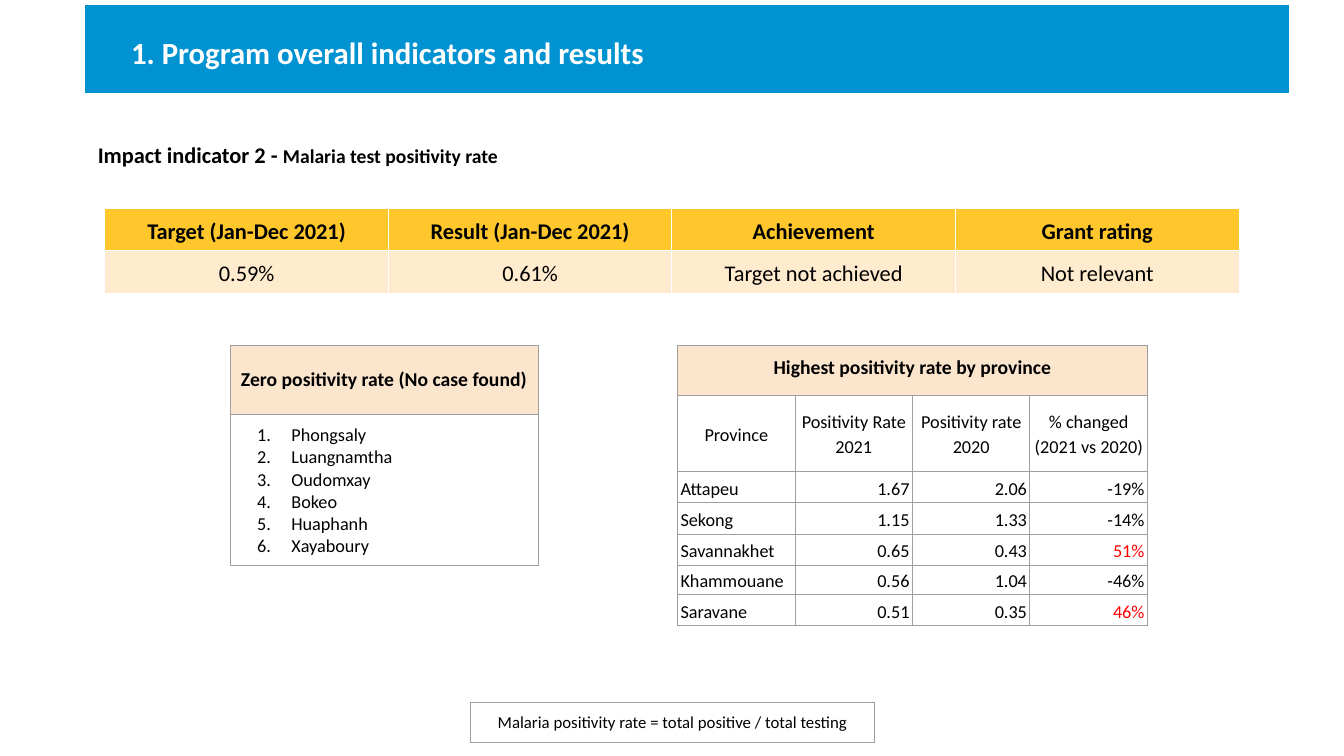
import dataclasses

import lxml.etree
import pptx
import pptx.dml.color
import pptx.enum.text
import pptx.oxml.ns
import pptx.util

ALIGN = pptx.enum.text.PP_ALIGN
ANCHOR = pptx.enum.text.MSO_ANCHOR
PX = 9144  # 100 px to the inch


@dataclasses.dataclass(frozen=True)
class Theme:
    font: str = "Calibri"
    ink: str = "000000"
    paper: str = "FFFFFF"
    banner: str = "0092D1"
    gold: str = "FFC72C"
    cream: str = "FFEBCD"
    peach: str = "FCE5CD"
    rule: str = "9E9E9E"
    alert: str = "FF0000"
    title_size: int = 22
    lead_size: int = 16
    head_size: int = 14
    body_size: int = 13
    note_size: int = 12


def px(length):
    return pptx.util.Emu(round(length * PX))


def rgb(color):
    return pptx.dml.color.RGBColor.from_string(color)


def add_xml(parent, tag, **attributes):
    element = lxml.etree.SubElement(parent, pptx.oxml.ns.qn(tag))
    for name, value in attributes.items():
        element.set(name, str(value))
    return element


class SlideBuilder:
    def __init__(self, slide, theme):
        self.slide = slide
        self.theme = theme

    def style(self, run, size, bold=False, color=None):
        run.font.name = self.theme.font
        run.font.size = pptx.util.Pt(size)
        run.font.bold = bold
        run.font.color.rgb = rgb(color or self.theme.ink)

    def margins(self, target, left, top, right, bottom):
        target.margin_left, target.margin_top = px(left), px(top)
        target.margin_right, target.margin_bottom = px(right), px(bottom)

    def title(self, text, left, top, width, height):
        banner = self.slide.shapes.title
        banner.left, banner.top = px(left), px(top)
        banner.width, banner.height = px(width), px(height)
        banner.fill.solid()
        banner.fill.fore_color.rgb = rgb(self.theme.banner)
        banner.line.color.rgb = rgb(self.theme.banner)
        banner.line.width = pptx.util.Pt(0.75)
        frame = banner.text_frame
        frame.text = text
        frame.word_wrap = True
        frame.auto_size = pptx.enum.text.MSO_AUTO_SIZE.NONE
        frame.vertical_anchor = ANCHOR.MIDDLE
        self.margins(frame, 45, 0, 0, 0)
        line = frame.paragraphs[0]
        line.alignment = ALIGN.LEFT
        line.line_spacing = 1.2
        self.style(line.runs[0], self.theme.title_size, True, self.theme.paper)

    def heading(self, parts, left, top, width, height):
        box = self.slide.shapes.add_textbox(px(left), px(top), px(width), px(height))
        frame = box.text_frame
        frame.word_wrap = True
        self.margins(frame, 0, 0, 0, 0)
        line = frame.paragraphs[0]
        line.line_spacing = 1.3
        for text, size in parts:
            run = line.add_run()
            run.text = text
            self.style(run, size, True)

    def table(self, left, top, width, columns, heights, border, border_width):
        frame = self.slide.shapes.add_table(
            len(heights), columns, px(left), px(top), px(width), px(sum(heights)))
        table = frame.table
        table.first_row = table.horz_banding = False
        for column in table.columns:
            column.width = px(width / columns)
        for row, height in zip(table.rows, heights):
            row.height = px(height)
        for cell in table.iter_cells():
            cell.fill.background()
            self.borders(cell, border, border_width)
        return table

    def borders(self, cell, color, width):
        properties = cell._tc.get_or_add_tcPr()
        for place, side in enumerate("LRTB"):
            line = add_xml(properties, f"a:ln{side}", w=pptx.util.Pt(width))
            add_xml(add_xml(line, "a:solidFill"), "a:srgbClr", val=color)
            properties.insert(place, line)  # borders come before the fill

    def cell(self, cell, text, size, bold=False, color=None, fill=None,
             align=ALIGN.LEFT, anchor=ANCHOR.MIDDLE, padding=(3, 2),
             spacing=1.15, numbered=False):
        if fill:
            cell.fill.solid()
            cell.fill.fore_color.rgb = rgb(fill)
        cell.vertical_anchor = anchor
        self.margins(cell, *padding, *padding)
        cell.text_frame.text = text
        for paragraph in cell.text_frame.paragraphs:
            if numbered:
                self.number(paragraph)
            paragraph.alignment = align
            paragraph.line_spacing = spacing
            self.style(paragraph.runs[0], size, bold, color)

    def number(self, paragraph):
        properties = paragraph._p.get_or_add_pPr()
        properties.set("marL", str(px(50)))
        properties.set("indent", str(px(-34)))
        add_xml(add_xml(properties, "a:buClr"), "a:srgbClr", val=self.theme.ink)
        add_xml(properties, "a:buAutoNum", type="arabicPeriod")


RESULTS = [
    ("Target (Jan-Dec 2021)", "Result (Jan-Dec 2021)", "Achievement", "Grant rating"),
    ("0.59%", "0.61%", "Target not achieved", "Not relevant"),
]
ZERO_PROVINCES = ["Phongsaly", "Luangnamtha", "Oudomxay", "Bokeo", "Huaphanh", "Xayaboury"]
RATE_HEADS = ["Province", "Positivity Rate 2021", "Positivity rate 2020",
              "% changed (2021 vs 2020)"]
RATES = [
    ("Attapeu", "1.67", "2.06", "-19%"),
    ("Sekong", "1.15", "1.33", "-14%"),
    ("Savannakhet", "0.65", "0.43", "51%"),
    ("Khammouane", "0.56", "1.04", "-46%"),
    ("Saravane", "0.51", "0.35", "46%"),
]


def main():
    deck = pptx.Presentation()
    deck.slide_width, deck.slide_height = px(1333), px(750)
    theme = Theme()
    builder = SlideBuilder(deck.slides.add_slide(deck.slide_layouts[5]), theme)
    roomy = dict(padding=(10, 10), spacing=1.0)

    # Title banner and indicator heading
    builder.title("1. Program overall indicators and results", 85, 5, 1193, 87)
    builder.heading([("Impact indicator 2 - ", theme.lead_size),
                     ("Malaria test positivity rate", theme.head_size)],
                    97, 132, 1193, 543)

    # Target against result
    results = builder.table(104, 207, 1125, 4, [42, 42], theme.paper, 0.83)
    for r, (row, fill) in enumerate(zip(RESULTS, (theme.gold, theme.cream))):
        for c, text in enumerate(row):
            builder.cell(results.cell(r, c), text, theme.lead_size, bold=r == 0,
                         fill=fill, align=ALIGN.CENTER)

    # Provinces without cases
    zero = builder.table(229, 343, 305, 1, [68, 150], theme.rule, 0.75)
    builder.cell(zero.cell(0, 0), "Zero positivity rate (No case found)",
                 theme.head_size, bold=True, fill=theme.peach, **roomy)
    builder.cell(zero.cell(1, 0), "\n".join(ZERO_PROVINCES), theme.body_size,
                 numbered=True, **roomy)

    # Provinces with the highest rates
    highest = builder.table(672, 343, 466, 4, [49, 76, 31, 31, 31, 29, 31],
                            theme.rule, 0.83)
    highest.cell(0, 0).merge(highest.cell(0, 3))
    builder.cell(highest.cell(0, 0), "Highest positivity rate by province",
                 theme.head_size, bold=True, fill=theme.peach,
                 align=ALIGN.CENTER, anchor=ANCHOR.TOP, **roomy)
    for c, text in enumerate(RATE_HEADS):
        builder.cell(highest.cell(1, c), text, theme.body_size, align=ALIGN.CENTER)
    for r, row in enumerate(RATES, start=2):
        for c, text in enumerate(row):
            rising = c == 3 and not text.startswith("-")
            builder.cell(highest.cell(r, c), text, theme.body_size,
                         color=theme.alert if rising else theme.ink,
                         align=ALIGN.RIGHT if c else ALIGN.LEFT)

    # Definition of the rate
    definition = builder.table(467, 697, 400, 1, [40], theme.rule, 0.75)
    builder.cell(definition.cell(0, 0),
                 "Malaria positivity rate = total positive / total testing",
                 theme.note_size, align=ALIGN.CENTER, anchor=ANCHOR.TOP, **roomy)

    deck.save("out.pptx")


if __name__ == "__main__":
    main()
